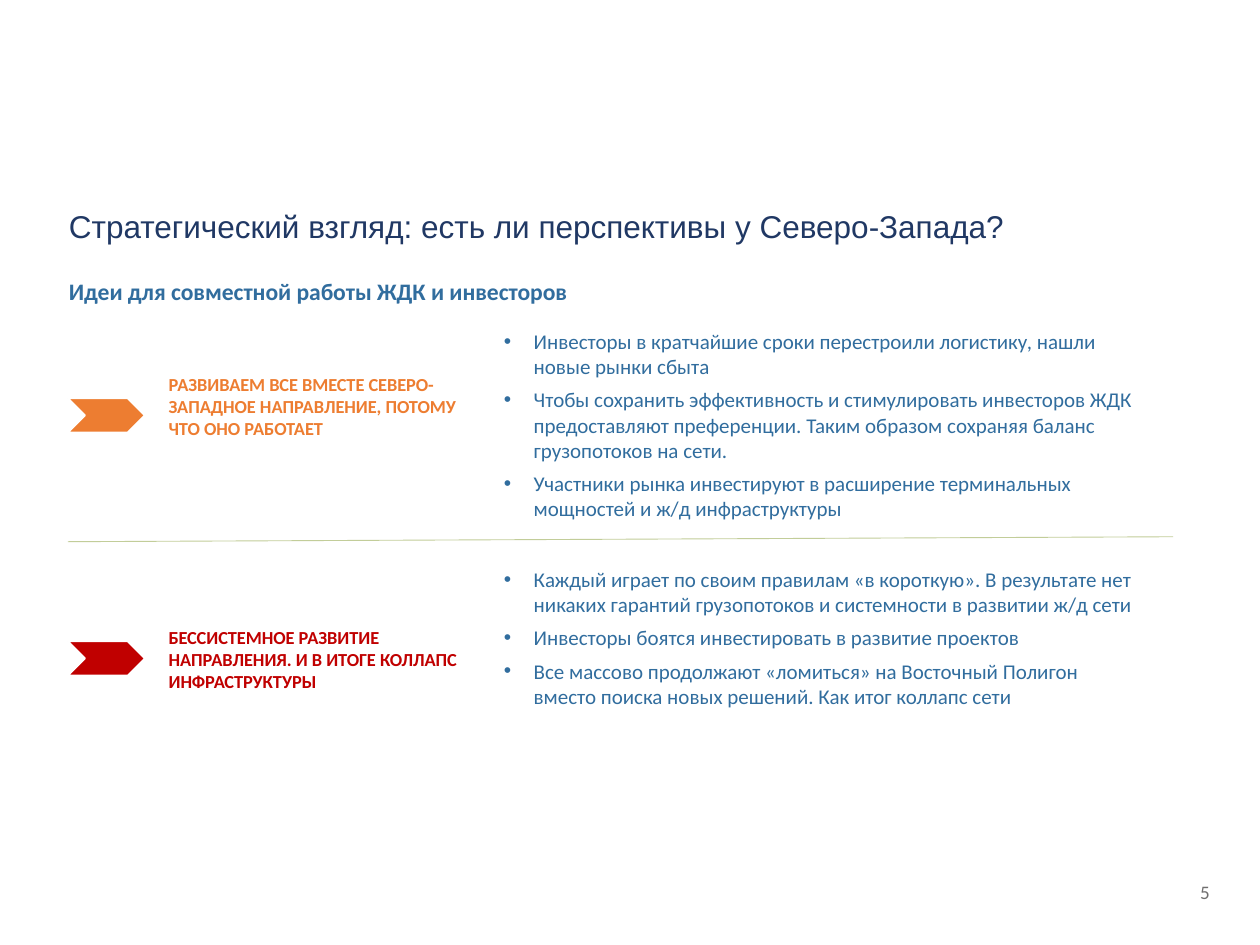
from lxml.etree import SubElement
from pptx import Presentation
from pptx.dml.color import RGBColor
from pptx.enum.shapes import MSO_CONNECTOR, MSO_SHAPE
from pptx.enum.text import MSO_ANCHOR as ANCHOR, PP_ALIGN as ALIGN
from pptx.oxml.ns import qn
from pptx.util import Cm, Pt

COLORS = {"navy": "203864", "blue": "316D9E", "orange": "ED7D31", "red": "C00000",
          "gray": "706F6F", "green": "C2CD99", "white": "FFFFFF"}


def rgb(name):
    return RGBColor.from_string(COLORS[name])


def add_text(box, lines, size, color, font="Calibri", bold=False,
             align=ALIGN.LEFT, anchor=ANCHOR.TOP, bullets=False):
    frame = slide.shapes.add_textbox(*map(Cm, box)).text_frame
    frame.word_wrap = True
    frame.vertical_anchor = anchor
    for i, line in enumerate(lines):
        paragraph = frame.paragraphs[0] if i == 0 else frame.add_paragraph()
        paragraph.text = line
        paragraph.alignment = align
        if bullets:
            paragraph.space_after = Pt(4.5)
            props = paragraph._p.get_or_add_pPr()
            props.set("marL", str(Cm(0.6)))
            props.set("indent", str(Cm(-0.6)))
            SubElement(props, qn("a:buFont"), typeface="Arial")
            SubElement(props, qn("a:buChar"), char="•")
        paragraph.font.name = font
        paragraph.font.size = Pt(size)
        paragraph.font.bold = bold
        paragraph.font.color.rgb = rgb(color)


deck = Presentation()
deck.slide_width, deck.slide_height = Cm(25.4), Cm(19.05)
slide = deck.slides.add_slide(deck.slide_layouts[6])

# Headings and page number
add_text((1.14, 3.99, 23.47, 1.12),
         ["Стратегический взгляд: есть ли перспективы у Северо-Запада?"],
         18, "navy", font="Arial", anchor=ANCHOR.MIDDLE)
add_text((1.14, 5.46, 22.25, 1.22), ["Идеи для совместной работы ЖДК и инвесторов"],
         13.5, "blue", bold=True)
add_text((23.09, 17.63, 1.55, 0.71), ["5"], 10.9, "gray", align=ALIGN.RIGHT)

# Scenarios: color, chevron top, label top and height, label, ideas top and height, ideas
scenarios = [
    ("orange", 8.03, (7.39, 2.06),
     "РАЗВИВАЕМ ВСЕ ВМЕСТЕ СЕВЕРО-ЗАПАДНОЕ НАПРАВЛЕНИЕ, ПОТОМУ ЧТО ОНО РАБОТАЕТ",
     (6.5, 4.19),
     ["Инвесторы в кратчайшие сроки перестроили логистику, нашли новые рынки сбыта",
      "Чтобы сохранить эффективность и стимулировать инвесторов ЖДК предоставляют "
      "преференции. Таким образом сохраняя баланс грузопотоков на сети.",
      "Участники рынка инвестируют в расширение терминальных мощностей и ж/д "
      "инфраструктуры"]),
    ("red", 12.93, (12.5, 1.6),
     "БЕССИСТЕМНОЕ РАЗВИТИЕ НАПРАВЛЕНИЯ. И В ИТОГЕ КОЛЛАПС ИНФРАСТРУКТУРЫ",
     (11.3, 3.68),
     ["Каждый играет по своим правилам «в короткую». В результате нет никаких "
      "гарантий грузопотоков и системности в развитии ж/д сети",
      "Инвесторы боятся инвестировать в развитие проектов",
      "Все массово продолжают «ломиться» на Восточный Полигон вместо поиска новых "
      "решений. Как итог коллапс сети"]),
]
for color, chevron_top, (label_top, label_height), label, (ideas_top, ideas_height), ideas in scenarios:
    chevron = slide.shapes.add_shape(MSO_SHAPE.CHEVRON, Cm(1.37), Cm(chevron_top),
                                     Cm(1.55), Cm(0.69))
    chevron.shadow.inherit = False
    chevron.fill.solid()
    chevron.fill.fore_color.rgb = rgb(color)
    chevron.line.color.rgb = rgb("white")
    chevron.line.width = Pt(1)
    add_text((3.15, label_top, 6.73, label_height), [label], 10.5, color, bold=True)
    add_text((9.91, ideas_top, 13.31, ideas_height), ideas, 12, "blue", bullets=True)

# Divider between the scenarios
divider = slide.shapes.add_connector(MSO_CONNECTOR.STRAIGHT, Cm(23.65), Cm(10.82),
                                     Cm(1.37), Cm(10.92))
divider.line.color.rgb = rgb("green")
divider.line.width = Pt(0.5)
SubElement(divider._element.spPr, qn("a:effectLst"))

deck.save("out.pptx")
